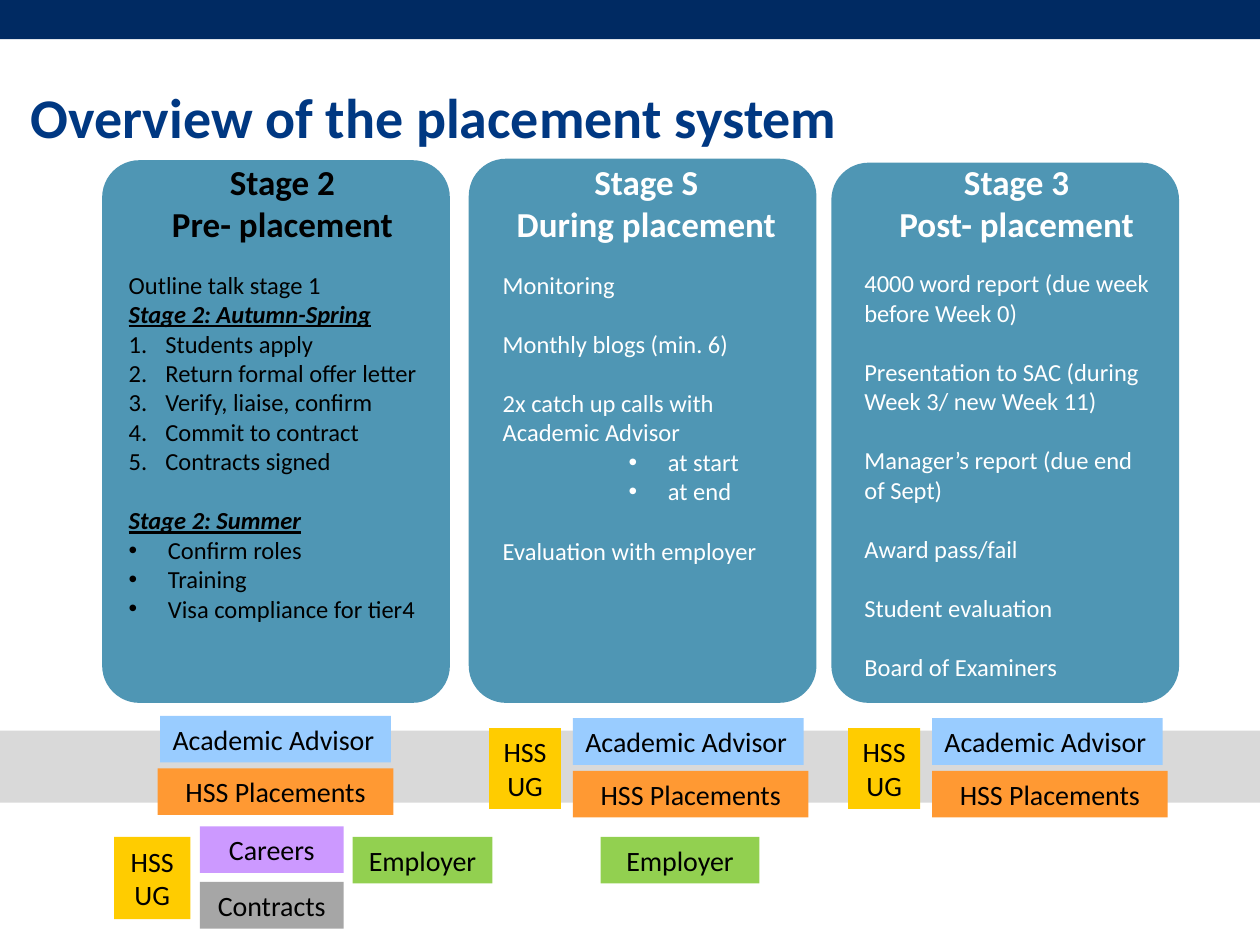
from lxml import etree
from pptx import Presentation
from pptx.dml.color import RGBColor
from pptx.enum.shapes import MSO_SHAPE
from pptx.enum.text import MSO_ANCHOR, MSO_AUTO_SIZE, PP_ALIGN
from pptx.oxml.ns import qn
from pptx.util import Cm, Pt

RECT, ROUND = MSO_SHAPE.RECTANGLE, MSO_SHAPE.ROUNDED_RECTANGLE
LEFT, CENTER = PP_ALIGN.LEFT, PP_ALIGN.CENTER
TOP, MIDDLE = MSO_ANCHOR.TOP, MSO_ANCHOR.MIDDLE
FIXED = MSO_AUTO_SIZE.NONE

NAVY = RGBColor(0x00, 0x2A, 0x62)
BLUE = RGBColor(0x00, 0x38, 0x82)
TEAL = RGBColor(0x00, 0x67, 0x93)
SILVER = RGBColor(0xD9, 0xD9, 0xD9)
GRAY = RGBColor(0xA6, 0xA6, 0xA6)
SKY = RGBColor(0x99, 0xCC, 0xFF)
ORANGE = RGBColor(0xFF, 0x99, 0x33)
GOLD = RGBColor(0xFF, 0xCC, 0x00)
LILAC = RGBColor(0xCC, 0x99, 0xFF)
GREEN = RGBColor(0x92, 0xD0, 0x50)
BLACK = RGBColor(0, 0, 0)
WHITE = RGBColor(0xFF, 0xFF, 0xFF)

GAP = 17  # one line of list text, in points
# kind: (left margin cm, hanging cm, level, bullet tag, bullet attributes)
KINDS = {
    "plain": (0, 0, 0, "a:buNone", {}),
    "head": (0, 0, 0, "a:buNone", {}),
    "step": (0.74, 0.74, 0, "a:buAutoNum", {"type": "arabicPeriod"}),
    "dot": (0.79, 0.79, 0, "a:buChar", {"char": "•"}),
    "sub": (3.33, 0.79, 2, "a:buChar", {"char": "•"}),
}

# (panel left, panel top), heading (left, width), list box, colour, heading, items
STAGES = [
    ((2.06, 3.23), (2.9, 5.59), (2.34, 5.31, 7.14, 7.44), BLACK,
     "Stage 2\nPre- placement", [
         ("Outline talk stage 1", "plain", 0),
         ("Stage 2: Autumn-Spring", "head", 0),
         ("Students apply", "step", 0),
         ("Return formal offer letter", "step", 0),
         ("Verify, liaise, confirm", "step", 0),
         ("Commit to contract", "step", 0),
         ("Contracts signed", "step", 0),
         ("Stage 2: Summer", "head", GAP),
         ("Confirm roles", "dot", 0),
         ("Training", "dot", 0),
         ("Visa compliance for tier4", "dot", 0)]),
    ((9.45, 3.2), (9.93, 6.2), (9.88, 5.31, 6.32, 6.25), WHITE,
     "Stage S\nDuring placement", [
         ("Monitoring", "plain", 0),
         ("Monthly blogs (min. 6)", "plain", GAP),
         ("2x catch up calls with Academic Advisor", "plain", GAP),
         ("at start", "sub", 0),
         ("at end", "sub", 0),
         ("Evaluation with employer", "plain", GAP)]),
    ((16.76, 3.28), (17.7, 5.59), (17.17, 5.28, 6.38, 8.64), WHITE,
     "Stage 3\nPost- placement", [
         ("4000 word report (due week before Week 0)", "plain", 0),
         ("Presentation to SAC (during Week 3/ new Week 11)", "plain", GAP),
         ("Manager’s report (due end of Sept)", "plain", GAP),
         ("Award pass/fail", "plain", GAP),
         ("Student evaluation", "plain", GAP),
         ("Board of Examiners", "plain", GAP)]),
]
PANEL_WIDTH, PANEL_END = 7.01, 14.17

# role: (text, fill, alignment)
ROLES = {
    "advisor": ("Academic Advisor", SKY, LEFT),
    "place": ("HSS Placements", ORANGE, CENTER),
    "office": ("HSS\nUG", GOLD, CENTER),
    "career": ("Careers", LILAC, CENTER),
    "contract": ("Contracts", GRAY, CENTER),
    "boss": ("Employer", GREEN, CENTER),
}
TAGS = [
    ("advisor", 3.23, 14.43, 4.65, 0.94),
    ("place", 3.18, 15.49, 4.75, 0.94),
    ("office", 2.3, 16.87, 1.54, 1.66),
    ("career", 4.03, 16.66, 2.9, 0.94),
    ("contract", 4.03, 17.78, 2.9, 0.94),
    ("boss", 7.11, 16.87, 2.82, 0.94),
    ("boss", 12.11, 16.87, 3.2, 0.94),
]
for start in (9.86, 17.1):
    TAGS += [
        ("office", start, 14.68, 1.45, 1.63),
        ("advisor", start + 1.69, 14.48, 4.65, 0.94),
        ("place", start + 1.69, 15.54, 4.75, 0.94),
    ]


def assign(item, values):
    for name, value in values.items():
        setattr(item, name, value)


class Painter:
    """Holds the text style and the slide being filled."""
    face = "Calibri"

    def __init__(self, slide):
        self.slide = slide
        self.shapes = slide.shapes

    def style(self, para, size, color, **extra):
        for run in para.runs:
            assign(run.font, dict(name=self.face, size=Pt(size), **extra))
            run.font.color.rgb = color

    def frame(self, shape, anchor):
        frame = shape.text_frame
        assign(frame, dict(word_wrap=True, auto_size=FIXED,
                           vertical_anchor=anchor))
        return frame

    def place(self, shape, box):
        names = ("left", "top", "width", "height")
        assign(shape, dict(zip(names, map(Cm, box))))

    def block(self, box, color, kind=RECT):
        shape = self.shapes.add_shape(kind, *map(Cm, box))
        shape.shadow.inherit = False
        shape.fill.solid()
        shape.fill.fore_color.rgb = color
        shape.line.fill.background()
        return shape

    def panel(self, left, top):
        box = (left, top, PANEL_WIDTH, PANEL_END - top)
        shape = self.block(box, TEAL, ROUND)
        shape.adjustments[0] = 0.107
        tint = next(shape._element.spPr.iter(qn("a:srgbClr")))
        etree.SubElement(tint, qn("a:alpha"), val="69000")

    def tag(self, role, *box):
        text, color, align = ROLES[role]
        frame = self.frame(self.block(box, color), MIDDLE)
        if align == CENTER:
            assign(frame, dict(margin_left=0, margin_right=0))
        para = frame.paragraphs[0]
        assign(para, dict(text=text, alignment=align))
        self.style(para, 16, BLACK)

    def title(self, text, box):
        shape = self.shapes.title
        self.place(shape, box)
        para = self.frame(shape, MIDDLE).paragraphs[0]
        assign(para, dict(text=text, alignment=LEFT))
        self.style(para, 32, BLUE, bold=True)

    def heading(self, text, left, width, color):
        shape = self.shapes.add_textbox(Cm(left), Cm(3.12), Cm(width), Cm(1.96))
        para = self.frame(shape, TOP).paragraphs[0]
        assign(para, dict(text=text, alignment=CENTER))
        self.style(para, 20, color, bold=True)

    def list(self, shape, box, items, color):
        self.place(shape, box)
        self.shapes._spTree.append(shape._element)  # bring above the panels
        frame = self.frame(shape, TOP)
        for spot, (text, kind, gap) in enumerate(items):
            para = frame.add_paragraph() if spot else frame.paragraphs[0]
            margin, hang, level, bullet, attrs = KINDS[kind]
            assign(para, dict(text=text, level=level, alignment=LEFT,
                              space_before=Pt(gap)))
            props = para._p.get_or_add_pPr()
            props.set("marL", str(Cm(margin)))
            props.set("indent", str(-Cm(hang)))
            etree.SubElement(props, qn(bullet), attrs)
            head = kind == "head"
            self.style(para, 14, color, bold=head, italic=head, underline=head)


def main():
    deck = Presentation()
    assign(deck, dict(slide_width=Cm(25.4), slide_height=Cm(19.05)))
    slide = deck.slides.add_slide(deck.slide_layouts[4])
    paint = Painter(slide)
    _, *bodies = slide.placeholders
    spare = bodies.pop()._element
    spare.getparent().remove(spare)

    paint.block((0, 0, 25.4, 0.79), NAVY)
    paint.block((0, 14.73, 25.4, 1.45), SILVER)
    paint.title("Overview of the placement system", (0.36, 0.76, 22.15, 3.18))
    for body, (corner, span, box, color, head, items) in zip(bodies, STAGES):
        paint.panel(*corner)
        paint.heading(head, *span, color)
        paint.list(body, box, items, color)
    for tag in TAGS:
        paint.tag(*tag)
    deck.save("out.pptx")


if __name__ == "__main__":
    main()
